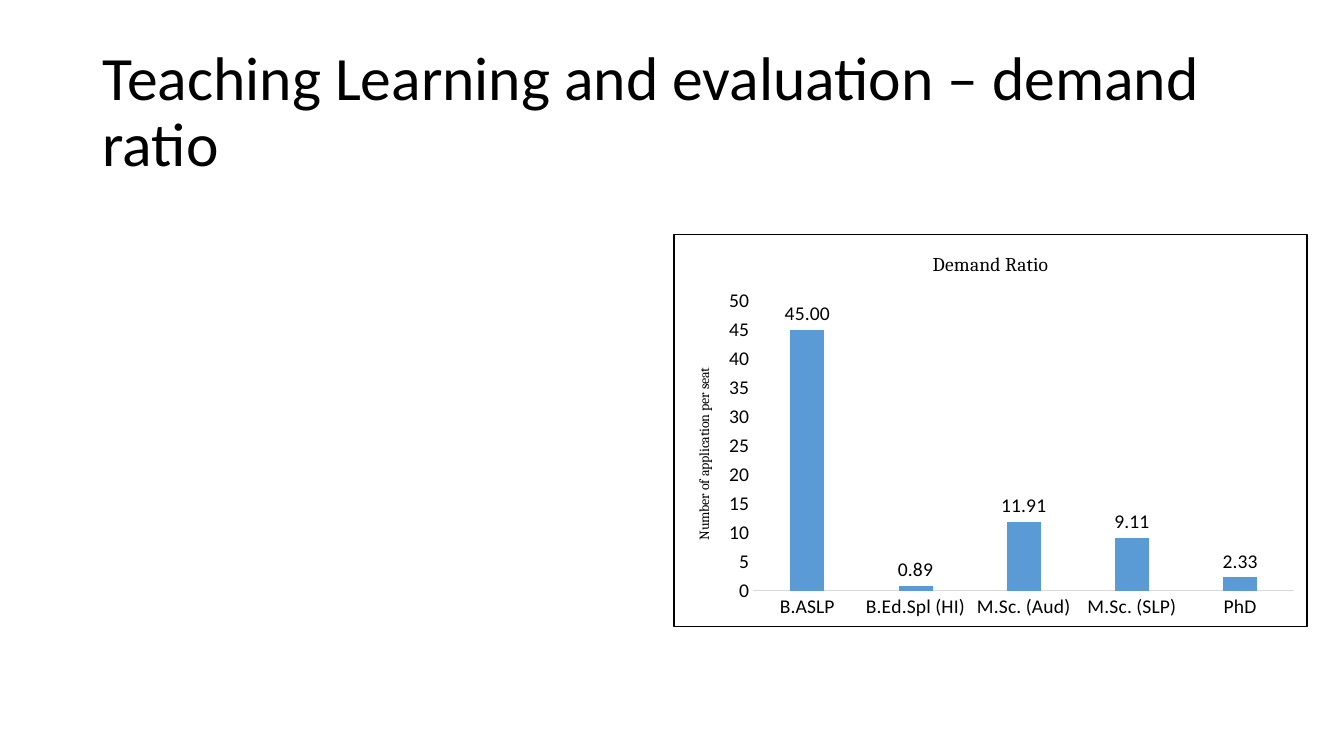
from lxml import etree
from pptx import Presentation
from pptx.chart.data import CategoryChartData
from pptx.dml.color import RGBColor
from pptx.enum.chart import XL_CHART_TYPE, XL_LABEL_POSITION, XL_TICK_MARK
from pptx.enum.text import MSO_ANCHOR
from pptx.util import Inches, Pt

COLUMN = XL_CHART_TYPE.COLUMN_CLUSTERED
OUTSIDE = XL_LABEL_POSITION.OUTSIDE_END
NO_TICK = XL_TICK_MARK.NONE
MIDDLE = MSO_ANCHOR.MIDDLE
COLORS = {"text": "000000", "bar": "5B9BD5", "axis": "D9D9D9", "paper": "FFFFFF"}
NS = ('xmlns:c="http://schemas.openxmlformats.org/drawingml/2006/chart" '
      'xmlns:a="http://schemas.openxmlformats.org/drawingml/2006/main"')


def set_font(font, name, size):
    font.name = name
    font.size = Pt(size)
    font.bold = False
    font.color.rgb = RGBColor.from_string(COLORS["text"])


prs = Presentation()
prs.slide_width = Inches(13.33)
prs.slide_height = Inches(7.5)
s = prs.slides.add_slide(prs.slide_layouts[6])

sp = s.shapes.add_textbox(Inches(0.92), Inches(0.4), Inches(11.5), Inches(1.45))
tf = sp.text_frame
tf.word_wrap = True
tf.vertical_anchor = MIDDLE
p = tf.paragraphs[0]
p.text = "Teaching Learning and evaluation – demand ratio"
p.line_spacing = 0.9
set_font(p.font, "Calibri", 44)

data = CategoryChartData()
data.categories = ["B.ASLP", "B.Ed.Spl (HI)", "M.Sc. (Aud)", "M.Sc. (SLP)", "PhD"]
data.add_series("Demand Ratio", [45, 0.89, 11.91, 9.11, 2.33])
chart = s.shapes.add_chart(
    COLUMN, Inches(6.68), Inches(2.32), Inches(6.29), Inches(3.9), data).chart
set_font(chart.font, "Calibri", 14)
chart.has_legend = False

cat_axis, val_axis = chart.category_axis, chart.value_axis
for axis in (cat_axis, val_axis):
    axis.major_tick_mark = NO_TICK
    axis.minor_tick_mark = NO_TICK
    axis.has_major_gridlines = False
    set_font(axis.tick_labels.font, "Calibri", 14)
cat_axis.format.line.color.rgb = RGBColor.from_string(COLORS["axis"])
cat_axis.format.line.width = Pt(0.75)
val_axis.format.line.fill.background()
val_axis.minimum_scale = 0
val_axis.maximum_scale = 50
val_axis.major_unit = 5

for owner, text, size in ((chart, "Demand Ratio", 14),
                          (val_axis, "Number of application per seat", 10)):
    owner.has_title = True
    p = (owner.chart_title if owner is chart else owner.axis_title).text_frame.paragraphs[0]
    r = p.add_run()
    r.text = text
    set_font(p.font, "Cambria", size)
    set_font(r.font, "Cambria", size)
chart.chart_title.include_in_layout = False

plot = chart.plots[0]
plot.gap_width = 219
plot.overlap = -27
plot.vary_by_categories = False
series = plot.series[0]
series.format.fill.solid()
series.format.fill.fore_color.rgb = RGBColor.from_string(COLORS["bar"])
labels = series.data_labels
labels.show_value = True
labels.number_format = "#,##0.00"
labels.number_format_is_linked = False
labels.position = OUTSIDE
set_font(labels.font, "Calibri", 14)

chart_space = chart.element
chart_el = chart_space.find("{*}chart")
chart_el.addnext(etree.fromstring(
    f'<c:spPr {NS}><a:solidFill><a:srgbClr val="{COLORS["paper"]}"/></a:solidFill>'
    f'<a:ln w="12700"><a:solidFill><a:srgbClr val="{COLORS["text"]}"/></a:solidFill></a:ln></c:spPr>'))

plot_area = chart_el.find("{*}plotArea")
for layout in plot_area.findall("{*}layout"):
    plot_area.remove(layout)
frame = "".join(f'<c:{key} val="{val}"/>' for key, val in (
    ("layoutTarget", "inner"), ("xMode", "edge"), ("yMode", "edge"),
    ("x", 0.125), ("y", 0.17), ("w", 0.855), ("h", 0.74)))
plot_area.insert(0, etree.fromstring(
    f'<c:layout {NS}><c:manualLayout>{frame}</c:manualLayout></c:layout>'))

prs.save("out.pptx")
